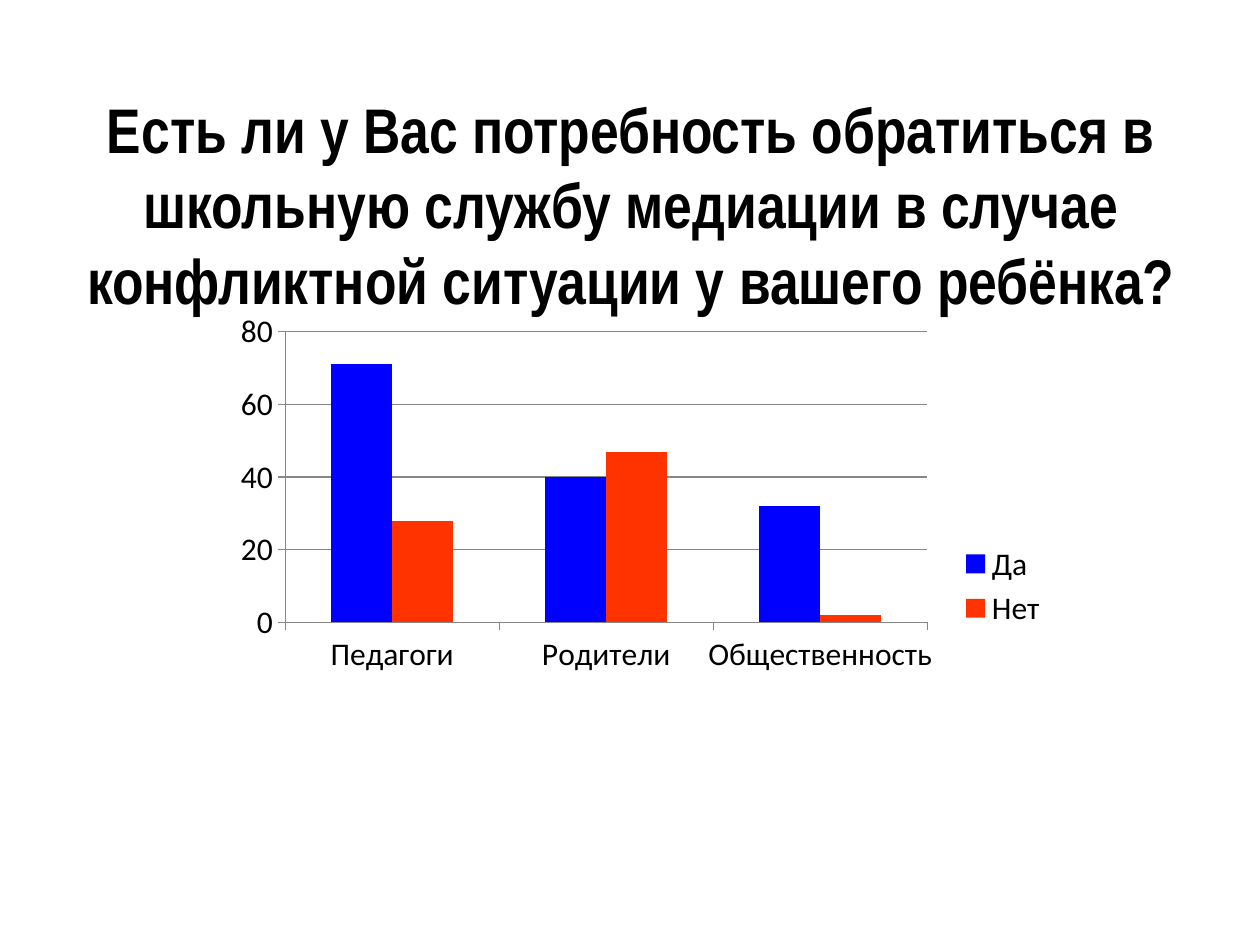
"""Build a survey slide with a question and a clustered column chart."""
from lxml.etree import SubElement
from pptx import Presentation
from pptx.chart.data import CategoryChartData
from pptx.dml.color import RGBColor
from pptx.enum.chart import XL_CHART_TYPE, XL_LEGEND_POSITION, XL_TICK_MARK
from pptx.enum.text import MSO_ANCHOR, MSO_AUTO_SIZE, PP_ALIGN
from pptx.oxml.ns import qn
from pptx.util import Inches, Pt

BLACK = RGBColor(0x00, 0x00, 0x00)
GRAY = RGBColor(0x87, 0x87, 0x87)
BLUE = RGBColor(0x00, 0x00, 0xFF)
RED = RGBColor(0xFF, 0x33, 0x00)

QUESTION = ("Есть ли у Вас потребность обратиться в школьную службу медиации "
            "в случае конфликтной ситуации у вашего ребёнка?")
GROUPS = ["Педагоги", "Родители", "Общественность"]
ANSWERS = [("Да", [71, 40, 32], BLUE), ("Нет", [28, 47, 2], RED)]

TITLE_BOX = (0.51, 0.99, 9, 1.25)
CHART_BOX = (1.69, 2.41, 6.67, 4.44)
PLOT_AREA = (0.086, 0.05, 0.764, 0.52)
LEGEND_AREA = (0.88, 0.42, 0.12, 0.17)
TITLE_FONT = {"name": "Arial Narrow", "size": Pt(36), "bold": True}
CHART_FONT = {"name": "Calibri", "size": Pt(18), "bold": False}


def set_font(font, values):
    for name, value in values.items():
        setattr(font, name, value)
    font.color.rgb = BLACK


def set_layout(parent, index, area, inner=False):
    for old in parent.findall(qn("c:layout")):
        parent.remove(old)
    layout = SubElement(parent, qn("c:layout"))
    parent.insert(index, layout)
    manual = SubElement(layout, qn("c:manualLayout"))
    settings = [("layoutTarget", "inner")] if inner else []
    settings += [("xMode", "edge"), ("yMode", "edge")]
    settings += zip("xywh", area)
    for tag, value in settings:
        SubElement(manual, qn(f"c:{tag}")).set("val", str(value))


def add_question(page):
    title = page.shapes.title
    title.left, title.top, title.width, title.height = map(Inches, TITLE_BOX)
    frame = title.text_frame
    frame.text = QUESTION
    frame.word_wrap = True
    frame.auto_size = MSO_AUTO_SIZE.NONE
    frame.vertical_anchor = MSO_ANCHOR.MIDDLE
    para = frame.paragraphs[0]
    para.alignment = PP_ALIGN.CENTER
    set_font(para.runs[0].font, TITLE_FONT)


def add_answers(page):
    data = CategoryChartData()
    data.categories = GROUPS
    for name, values, _ in ANSWERS:
        data.add_series(name, values)
    chart = page.shapes.add_chart(XL_CHART_TYPE.COLUMN_CLUSTERED,
                                  *map(Inches, CHART_BOX), data).chart
    chart.has_title = False
    set_font(chart.font, CHART_FONT)

    plot = chart.plots[0]
    plot.gap_width = 150
    plot.overlap = 0
    plot.vary_by_categories = False
    for series, (_, _, color) in zip(plot.series, ANSWERS):
        series.format.fill.solid()
        series.format.fill.fore_color.rgb = color

    value_axis = chart.value_axis
    value_axis.minimum_scale = 0
    value_axis.maximum_scale = 80
    value_axis.major_unit = 20
    value_axis.has_major_gridlines = True
    for axis in (chart.category_axis, value_axis):
        axis.major_tick_mark = XL_TICK_MARK.OUTSIDE
        axis.minor_tick_mark = XL_TICK_MARK.NONE
    for part in (chart.category_axis, value_axis, value_axis.major_gridlines):
        part.format.line.color.rgb = GRAY
        part.format.line.width = Pt(0.75)

    chart.has_legend = True
    legend = chart.legend
    legend.position = XL_LEGEND_POSITION.RIGHT
    legend.include_in_layout = False
    set_font(legend.font, CHART_FONT)
    root = chart.element
    set_layout(root.find(f".//{qn('c:plotArea')}"), 0, PLOT_AREA, inner=True)
    set_layout(root.find(f".//{qn('c:legend')}"), 1, LEGEND_AREA)


def main():
    deck = Presentation()
    deck.slide_width, deck.slide_height = Inches(10), Inches(7.5)
    page = deck.slides.add_slide(deck.slide_layouts[5])
    add_question(page)
    add_answers(page)
    deck.save("out.pptx")


if __name__ == "__main__":
    main()
